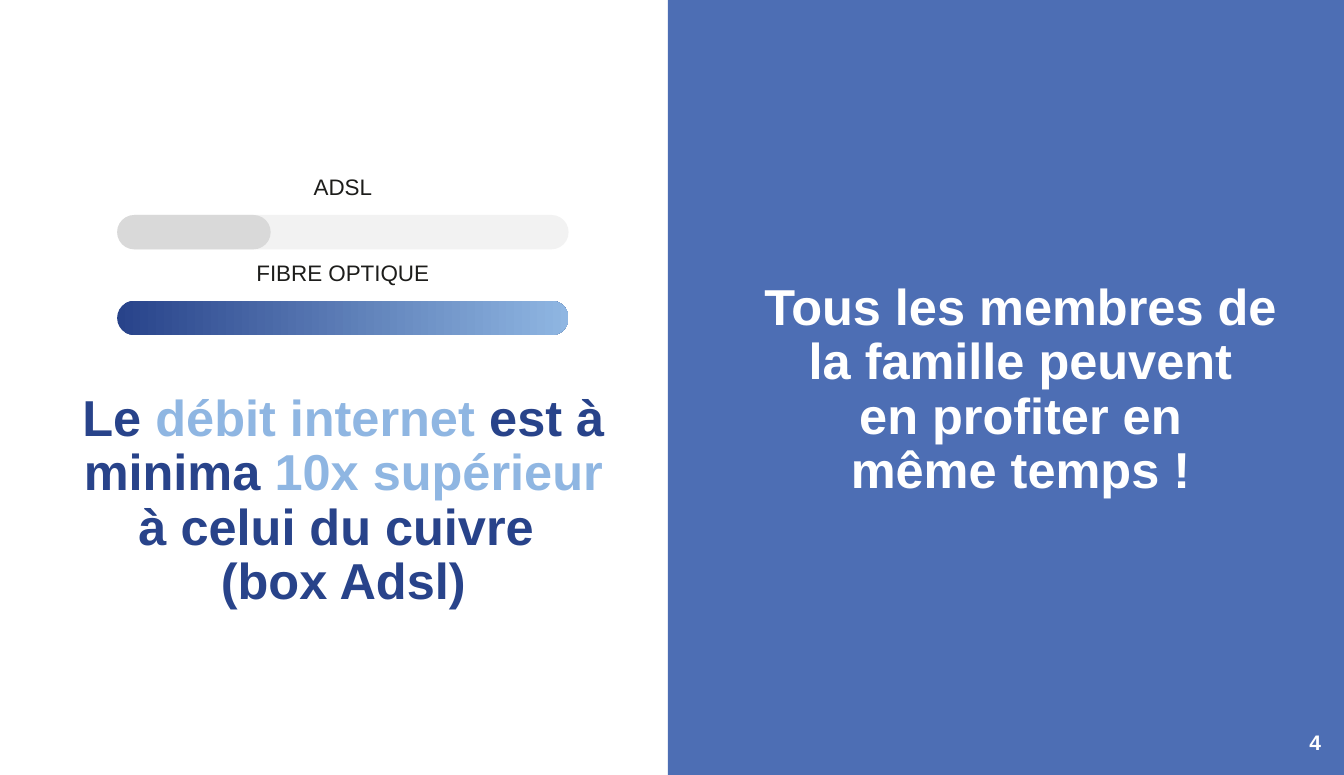
from dataclasses import dataclass

from pptx import Presentation
from pptx.dml.color import RGBColor
from pptx.enum.shapes import MSO_SHAPE
from pptx.enum.text import MSO_ANCHOR, PP_ALIGN
from pptx.util import Inches, Pt

RECTANGLE, ROUNDED = MSO_SHAPE.RECTANGLE, MSO_SHAPE.ROUNDED_RECTANGLE
TOP, BOTTOM = MSO_ANCHOR.TOP, MSO_ANCHOR.BOTTOM
CENTER, RIGHT = PP_ALIGN.CENTER, PP_ALIGN.RIGHT

# The page is 338 x 195 mm, with the panel starting at 168 mm
MM_PER_INCH = 25.4
PAGE_WIDTH, PAGE_HEIGHT = 338 / MM_PER_INCH, 195 / MM_PER_INCH
PANEL_LEFT = 168 / MM_PER_INCH


@dataclass(frozen=True)
class Theme:
    font: str = "Arial"
    panel: str = "4D6EB4"
    navy: str = "28438A"
    sky: str = "8FB6E2"
    white: str = "FFFFFF"
    ink: str = "1D1D1B"
    track: str = "F2F2F2"
    slow: str = "D9D9D9"
    headline: int = 36
    label: int = 16
    page: int = 15


def write(frame, paragraphs, *, size, color, font, bold=False, align=CENTER,
          spacing=None):
    """Fill a frame; each paragraph is a string or a list of (text, color)."""
    for index, content in enumerate(paragraphs):
        paragraph = frame.paragraphs[0] if index == 0 else frame.add_paragraph()
        paragraph.alignment = align
        if spacing:
            paragraph.line_spacing = spacing
        parts = [(content, color)] if isinstance(content, str) else content
        for text, part_color in parts:
            run = paragraph.add_run()
            run.text = text
            run.font.name = font
            run.font.size = Pt(size)
            run.font.bold = bold
            run.font.color.rgb = RGBColor.from_string(part_color)


class SlideBuilder:
    def __init__(self, slide, theme):
        self.slide = slide
        self.theme = theme

    def block(self, kind, left, top, width, height, *colors):
        """Add a borderless shape; two colors give a left-to-right gradient."""
        shape = self.slide.shapes.add_shape(
            kind, Inches(left), Inches(top), Inches(width), Inches(height))
        shape.shadow.inherit = False
        shape.line.fill.background()
        if len(colors) == 1:
            shape.fill.solid()
            shape.fill.fore_color.rgb = RGBColor.from_string(colors[0])
        else:
            shape.fill.gradient()
            shape.fill.gradient_angle = 0
            for stop, color in zip(shape.fill.gradient_stops, colors):
                stop.color.rgb = RGBColor.from_string(color)
        return shape

    def bar(self, left, top, width, height, *colors):
        pill = self.block(ROUNDED, left, top, width, height, *colors)
        pill.adjustments[0] = 0.5

    def text(self, left, top, width, height, paragraphs, *, anchor=TOP,
             inset=True, **style):
        box = self.slide.shapes.add_textbox(
            Inches(left), Inches(top), Inches(width), Inches(height))
        frame = box.text_frame
        frame.word_wrap = True
        frame.vertical_anchor = anchor
        if not inset:
            frame.margin_left = frame.margin_right = 0
            frame.margin_top = frame.margin_bottom = 0
        write(frame, paragraphs, font=self.theme.font, **style)

    def headline(self, left, top, width, height, paragraphs, color):
        self.text(left, top, width, height, paragraphs, color=color,
                  size=self.theme.headline, bold=True, spacing=0.9)


def main():
    theme = Theme()
    deck = Presentation()
    deck.slide_width, deck.slide_height = Inches(PAGE_WIDTH), Inches(PAGE_HEIGHT)
    builder = SlideBuilder(deck.slides.add_slide(deck.slide_layouts[6]), theme)

    # Right panel and page number
    builder.block(RECTANGLE, PANEL_LEFT, 0, PAGE_WIDTH - PANEL_LEFT,
                  PAGE_HEIGHT, theme.panel)
    builder.text(12.61, 7.23, 0.47, 0.25, ["4"], anchor=BOTTOM, inset=False,
                 size=theme.page, color=theme.white, bold=True, align=RIGHT)

    # Headline under the speed bars
    builder.headline(0.66, 3.84, 5.48, 2.28, [
        [("Le ", theme.navy), ("débit internet ", theme.sky),
         ("est à minima", theme.navy), (" 10x supérieur ", theme.sky),
         ("à celui du cuivre ", theme.navy)],
        "(box Adsl)"], theme.navy)

    # Speed bars, each with a label centred above it
    bar_left, bar_width, bar_height = 1.16, 4.47, 0.34
    first_bar, bar_pitch = 2.13, 0.85
    speeds = [("ADSL", 1.71, [theme.track]),
              ("FIBRE OPTIQUE", 2.43, [theme.navy, theme.sky])]
    for row, (technology, label_width, colors) in enumerate(speeds):
        bar_top = first_bar + row * bar_pitch
        label_left = bar_left + (bar_width - label_width) / 2
        builder.bar(bar_left, bar_top, bar_width, bar_height, *colors)
        builder.text(label_left, bar_top - 0.46, label_width, 0.37,
                     [technology], size=theme.label, color=theme.ink)
    builder.bar(bar_left, first_bar, 1.52, bar_height, theme.slow)

    # Headline on the panel
    builder.headline(7.42, 2.74, 5.37, 2.28, [
        "Tous les membres de la famille peuvent",
        "en profiter en",
        "même temps !"], theme.white)

    deck.save("out.pptx")


if __name__ == "__main__":
    main()
